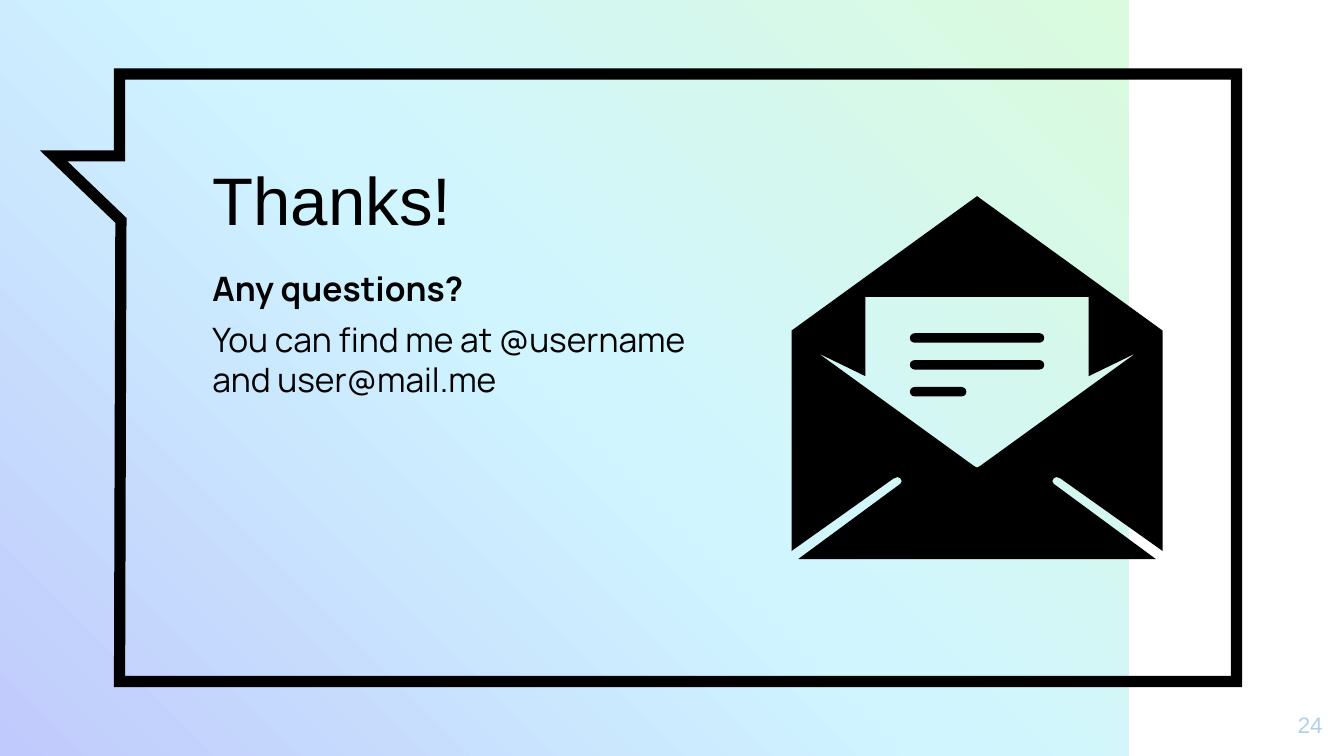
from copy import deepcopy

from lxml import etree
from pptx import Presentation
from pptx.dml.color import RGBColor
from pptx.enum import shapes, text
from pptx.oxml.ns import qn
from pptx.util import Inches, Pt

BLACK = RGBColor(0x00, 0x00, 0x00)
PAGE_BLUE = RGBColor(0xAF, 0xCF, 0xEC)
GRADIENT = [
    (0, RGBColor(0xC0, 0xCA, 0xFC)),
    (0.5, RGBColor(0xD0, 0xF5, 0xFF)),
    (1, RGBColor(0xDA, 0xFB, 0xDD)),
]

SLIDE_WIDTH = Inches(10)
SLIDE_HEIGHT = SLIDE_WIDTH * 9 // 16

CALLOUT = [(0.89, 0.55), (9.2, 0.55), (9.2, 5.07), (0.89, 5.07),
           (0.9, 1.64), (0.4, 1.16), (0.89, 1.16)]

# Left halves of the envelope outlines, each from the top to the bottom centre
ENVELOPE_AXIS = 7.27
LETTER_HALF = [(6.44, 2.21), (6.44, 2.8), (6.09, 2.63), (7.25, 3.47), (7.27, 3.48)]
ENVELOPE_HALF = [(7.27, 1.46), (5.89, 2.46), (5.89, 4.1), (6.65, 3.56),
                 (6.68, 3.55), (6.7, 3.56), (6.71, 3.58), (6.7, 3.6),
                 (5.94, 4.16)]


def mirrored(half):
    """Close a left half outline with its reflection in the envelope axis."""
    return half + [(2 * ENVELOPE_AXIS - x, y) for x, y in reversed(half)]


def add_freeform(parent, *contours):
    def in_inches(points):
        return [(Inches(x), Inches(y)) for x, y in points]

    first, *others = [in_inches(contour) for contour in contours]
    builder = parent.build_freeform(*first[0])
    builder.add_line_segments(first[1:], close=True)
    for contour in others:
        builder.move_to(*contour[0])
        builder.add_line_segments(contour[1:], close=True)
    shape = builder.convert_to_shape()
    shape.shadow.inherit = False
    return shape


def fill_black(shape):
    shape.fill.solid()
    shape.fill.fore_color.rgb = BLACK
    shape.line.fill.background()


def add_gradient_panel(slide):
    panel = slide.shapes.add_shape(
        shapes.MSO_SHAPE.RECTANGLE, 0, 0, Inches(8.4), SLIDE_HEIGHT)
    panel.shadow.inherit = False
    panel.line.fill.background()
    panel.fill.gradient()
    panel.fill.gradient_angle = 45
    stop_list = panel.element.spPr.find(".//" + qn("a:gsLst"))
    stop_list.append(deepcopy(stop_list[-1]))
    for stop, (position, color) in zip(panel.fill.gradient_stops, GRADIENT):
        stop.position = position
        stop.color.rgb = color


def add_callout(slide):
    callout = add_freeform(slide.shapes, CALLOUT)
    callout.fill.background()
    callout.line.color.rgb = BLACK
    callout.line.width = Pt(6)
    line = callout.element.spPr.find(qn("a:ln"))
    etree.SubElement(line, qn("a:miter"), lim="800000")


def add_envelope(slide):
    group = slide.shapes.add_group_shape()
    fill_black(add_freeform(
        group.shapes, mirrored(LETTER_HALF)[::-1], mirrored(ENVELOPE_HALF)))
    for row, width in enumerate([1, 1, 0.42]):
        bar = group.shapes.add_shape(
            shapes.MSO_SHAPE.ROUNDED_RECTANGLE,
            Inches(6.77), Inches(2.48 + 0.2 * row), Inches(width), Inches(0.07))
        bar.adjustments[0] = 0.5
        bar.shadow.inherit = False
        fill_black(bar)


def place_text(shape, box, paragraphs, anchor=text.MSO_ANCHOR.TOP):
    """Place the shape, give it equal insets and return its paragraphs."""
    shape.left, shape.top, shape.width, shape.height = map(Inches, box)
    frame = shape.text_frame
    frame.word_wrap = True
    frame.auto_size = text.MSO_AUTO_SIZE.NONE
    frame.vertical_anchor = anchor
    frame.margin_left = frame.margin_right = Inches(0.1)
    frame.margin_top = frame.margin_bottom = Inches(0.1)
    frame.text = "\n".join(paragraphs)
    return frame.paragraphs


def format_paragraph(paragraph, font, size, color=BLACK, bold=False,
                     alignment=text.PP_ALIGN.LEFT, space_before=0):
    paragraph.alignment = alignment
    paragraph.space_before = Pt(space_before)
    paragraph.font.name = font
    paragraph.font.size = Pt(size)
    paragraph.font.bold = bold
    paragraph.font.color.rgb = color


def add_texts(slide):
    title, subtitle = slide.placeholders
    # Placeholders come first in a new slide: bring them in front of the panel
    for placeholder in (title, subtitle):
        slide.shapes.element.append(placeholder.element)

    [heading] = place_text(title, (1.48, 1.07, 3.96, 0.81), ["Thanks!"],
                           text.MSO_ANCHOR.BOTTOM)
    format_paragraph(heading, "Arial", 36)

    question, contact = place_text(
        subtitle, (1.48, 1.89, 3.96, 2.29),
        ["Any questions?", "You can find me at @username and user@mail.me"])
    format_paragraph(question, "Manrope", 18, bold=True, space_before=6)
    format_paragraph(contact, "Manrope", 18, space_before=6)


def add_page_number(slide):
    box = slide.shapes.add_textbox(0, 0, 0, 0)
    [number] = place_text(box, (9.34, 5.19, 0.6, 0.43), ["24"])
    format_paragraph(number, "Arial", 12, PAGE_BLUE,
                     alignment=text.PP_ALIGN.RIGHT)


def main():
    presentation = Presentation()
    presentation.slide_width = SLIDE_WIDTH
    presentation.slide_height = SLIDE_HEIGHT
    slide = presentation.slides.add_slide(presentation.slide_layouts[0])
    add_gradient_panel(slide)
    add_callout(slide)
    add_texts(slide)
    add_envelope(slide)
    add_page_number(slide)
    presentation.save("out.pptx")


if __name__ == "__main__":
    main()
